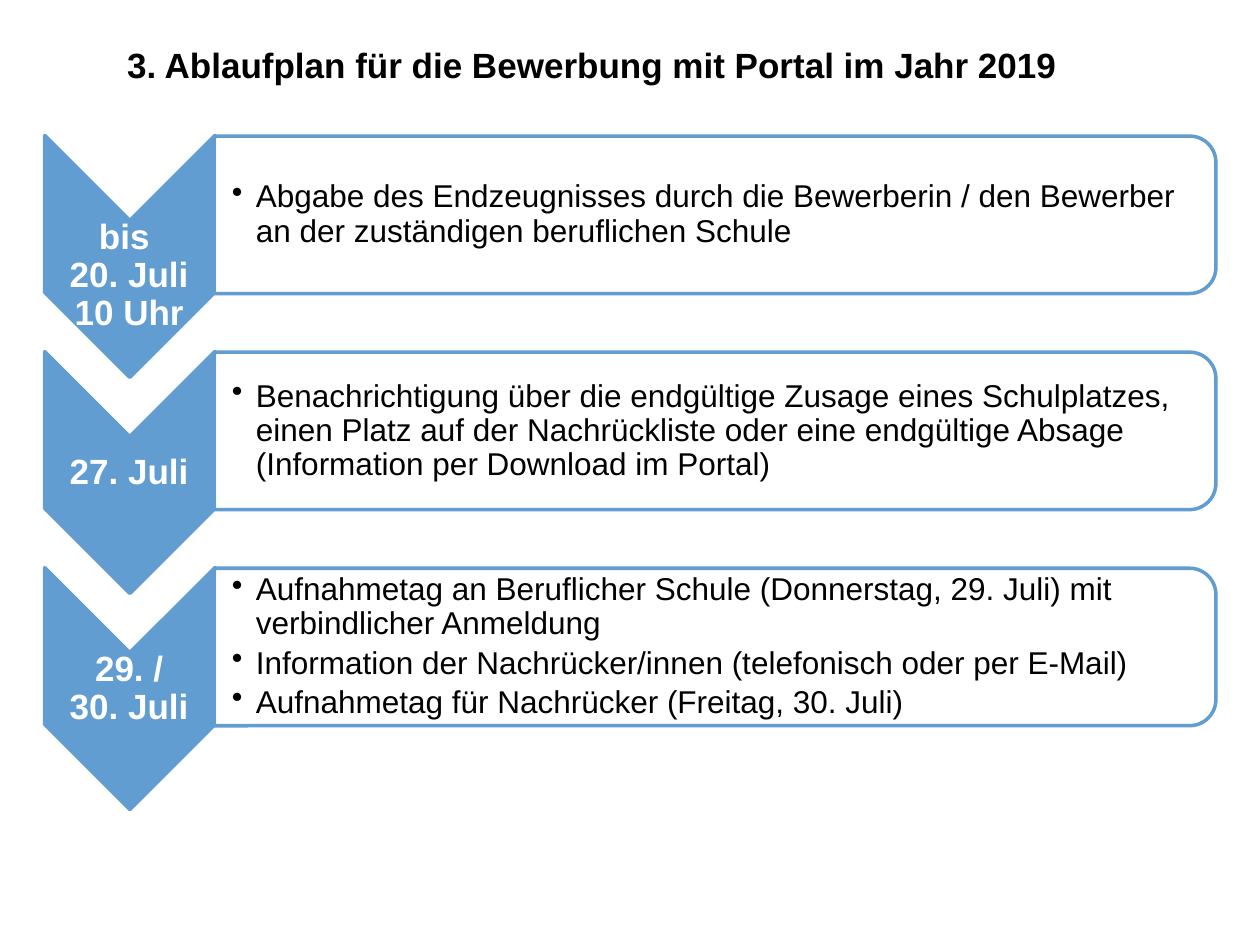
"""Build the slide with the three-step application schedule for 2019."""
from lxml import etree
from pptx import Presentation
from pptx.dml.color import RGBColor
from pptx.enum import shapes, text
from pptx.oxml import ns
from pptx.util import Inches, Pt

COLORS = {"blue": "629DD1", "white": "FFFFFF", "black": "000000"}
STEPS = [
    ("bis \v20. Juli\v10 Uhr", 0.31, [
        "Abgabe des Endzeugnisses durch die Bewerberin / den Bewerber "
        "an der zuständigen beruflichen Schule"]),
    ("27. Juli", 0.01, [
        "Benachrichtigung über die endgültige Zusage eines Schulplatzes, "
        "einen Platz auf der Nachrückliste oder eine endgültige Absage "
        "(Information per Download im Portal)"]),
    ("29. /\v30. Juli", 0.01, [
        "Aufnahmetag an Beruflicher Schule (Donnerstag, 29. Juli) mit "
        "verbindlicher Anmeldung",
        "Information der Nachrücker/innen (telefonisch oder per E-Mail)",
        "Aufnahmetag für Nachrücker (Freitag, 30. Juli)"]),
]
FIRST_TOP, STEP_PITCH = 1.08, 1.715

presentation = Presentation()
presentation.slide_width, presentation.slide_height = Inches(10), Inches(7.5)
slide = presentation.slides.add_slide(presentation.slide_layouts[6])


def add_rotated_shape(kind, left, top, width, height, color):
    shape = slide.shapes.add_shape(
        kind, Inches(left), Inches(top), Inches(width), Inches(height))
    shape.rotation = 90
    shape.shadow.inherit = False
    shape.fill.solid()
    shape.fill.fore_color.rgb = RGBColor.from_string(COLORS[color])
    shape.line.color.rgb = RGBColor.from_string(COLORS["blue"])
    shape.line.width = Pt(2)
    return shape


def add_text(paragraphs, box, insets, size, color, bold=False, bullet=False,
             spacing=0.9, after=0, align=text.PP_ALIGN.LEFT,
             anchor=text.MSO_ANCHOR.MIDDLE):
    shape = slide.shapes.add_textbox(*[Inches(value) for value in box])
    frame = shape.text_frame
    frame.word_wrap = True
    frame.vertical_anchor = anchor
    (frame.margin_left, frame.margin_top, frame.margin_right,
     frame.margin_bottom) = [Inches(value) for value in insets]
    for index, content in enumerate(paragraphs):
        paragraph = frame.add_paragraph() if index else frame.paragraphs[0]
        paragraph.text = content
        if bullet:
            properties = paragraph._p.get_or_add_pPr()
            properties.set("marL", str(Inches(0.19)))
            properties.set("indent", str(Inches(-0.19)))
            etree.SubElement(properties, ns.qn("a:buChar"), char="•")
        paragraph.alignment = align
        paragraph.line_spacing = spacing
        paragraph.space_after = Pt(after)
        paragraph.font.name = "Arial"
        paragraph.font.size = Pt(size)
        paragraph.font.bold = bold
        paragraph.font.color.rgb = RGBColor.from_string(COLORS[color])


add_text(["3. Ablaufplan für die Bewerbung mit Portal im Jahr 2019"],
         (0.91, 0.13, 9.69, 0.61), (0.1, 0.05, 0.1, 0.05), 20, "black",
         bold=True, spacing=1.5, anchor=text.MSO_ANCHOR.TOP)

for index, (date, date_inset, tasks) in enumerate(STEPS):
    top = FIRST_TOP + index * STEP_PITCH
    add_rotated_shape(shapes.MSO_SHAPE.CHEVRON,
                      0.07, top + 0.28, 1.92, 1.35, "blue")
    add_text([date], (0.35, top + 0.67, 1.35, 0.58),
             (0.01, date_inset, 0.01, 0.01), 20, "white", bold=True,
             after=7, align=text.PP_ALIGN.CENTER)
    panel = add_rotated_shape(shapes.MSO_SHAPE.ROUND_2_SAME_RECTANGLE,
                              5.05, top - 3.35, 1.25, 7.95, "white")
    fill_color = panel._element.spPr.find(".//" + ns.qn("a:srgbClr"))
    etree.SubElement(fill_color, ns.qn("a:alpha"), val="90000")
    add_text(tasks, (1.7, top + 0.06, 7.89, 1.13),
             (0.14, 0.01, 0.01, 0.01), 18, "black", bullet=True, after=3)

presentation.save("out.pptx")
